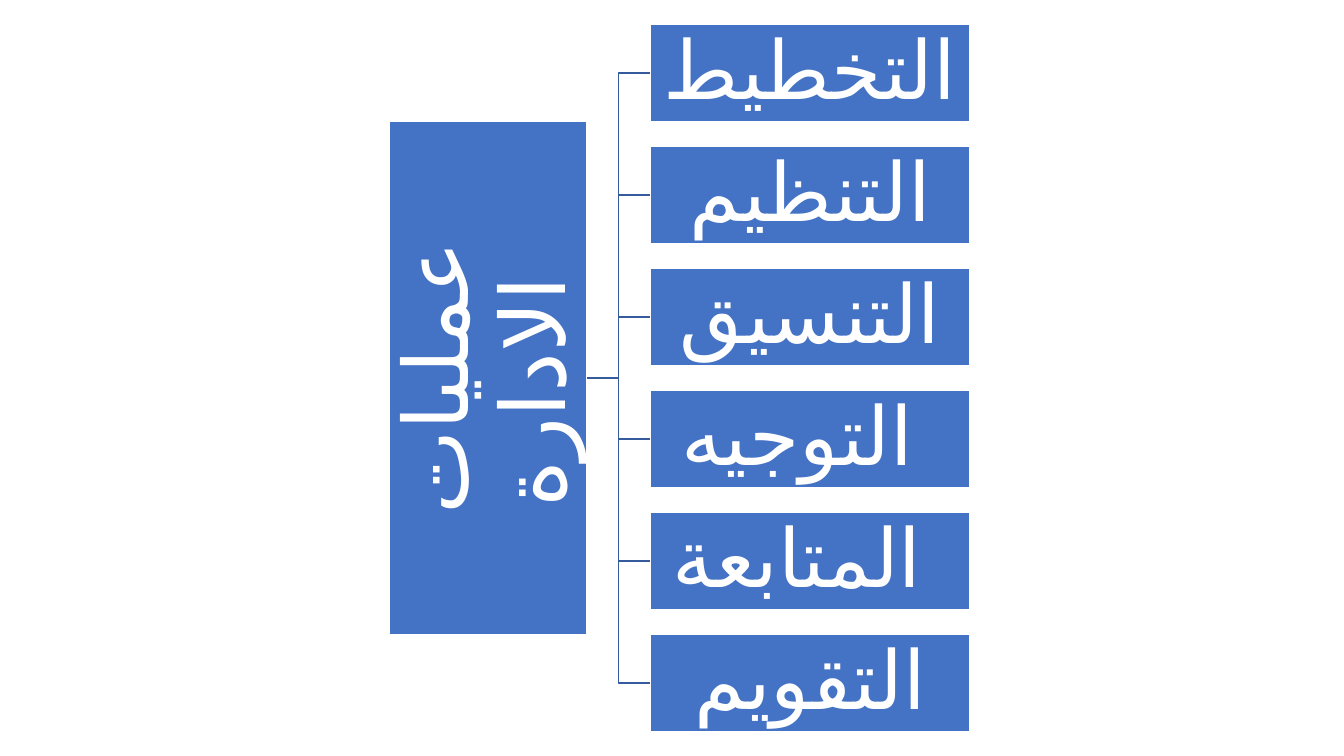
"""Build a slide with a tree of the management processes."""
from lxml import etree
from pptx import Presentation
from pptx.dml.color import RGBColor
from pptx.enum.shapes import MSO_SHAPE
from pptx.enum.text import MSO_ANCHOR, PP_ALIGN
from pptx.oxml.ns import qn
from pptx.util import Inches, Pt

TITLE = "عمليات الادارة "
PROCESSES = ["التخطيط ", "التنظيم", "التنسيق", "التوجيه ", "المتابعة ", "التقويم"]

THEME = {
    "font": "Calibri",
    "arabic_font": "DejaVu Sans",
    "box": RGBColor(0x44, 0x72, 0xC4),
    "branch": RGBColor(0x36, 0x5B, 0x9D),
    "white": RGBColor(0xFF, 0xFF, 0xFF),
    "title_size": Pt(64),
    "process_size": Pt(58),
    "line": Pt(1),
}
FRAME_FORMAT = {
    "word_wrap": True,
    "vertical_anchor": MSO_ANCHOR.MIDDLE,
    **{f"margin_{side}": Inches(0.04) for side in ("left", "top", "right", "bottom")},
}
PARAGRAPH_FORMAT = {"alignment": PP_ALIGN.CENTER, "line_spacing": 0.9}

SLIDE_WIDTH, SLIDE_HEIGHT = 13.33, 7.5
MIDDLE = SLIDE_HEIGHT / 2
TITLE_LENGTH, TITLE_DEPTH, TITLE_RIGHT = 5.09, 1.96, 5.82
PROCESS_LEFT, PROCESS_WIDTH, PROCESS_HEIGHT, PITCH = 6.45, 3.17, 0.97, 1.21


def set_format(target, values):
    for name, value in values.items():
        setattr(target, name, value)


def add_box(slide, text, center, size, font_size, rotation=0):
    (x, y), (width, height) = center, size
    box = slide.shapes.add_shape(
        MSO_SHAPE.RECTANGLE,
        Inches(x - width / 2), Inches(y - height / 2), Inches(width), Inches(height),
    )
    box.rotation = rotation
    box.shadow.inherit = False
    box.fill.solid()
    box.fill.fore_color.rgb = THEME["box"]
    box.line.color.rgb = THEME["white"]
    box.line.width = THEME["line"]
    set_format(box.text_frame, FRAME_FORMAT)
    paragraph = box.text_frame.paragraphs[0]
    set_format(paragraph, PARAGRAPH_FORMAT)
    run = paragraph.add_run()
    run.text = text
    set_format(run.font, {"name": THEME["font"], "size": font_size})
    run.font.color.rgb = THEME["white"]
    complex_font = etree.SubElement(run._r.get_or_add_rPr(), qn("a:cs"))
    complex_font.set("typeface", THEME["arabic_font"])


def add_branch(slide, y):
    bend = (TITLE_RIGHT + PROCESS_LEFT) / 2
    points = [(TITLE_RIGHT, MIDDLE), (bend, MIDDLE), (bend, y), (PROCESS_LEFT, y)]
    start, *corners = [(Inches(across), Inches(down)) for across, down in points]
    builder = slide.shapes.build_freeform(*start)
    builder.add_line_segments(corners, close=False)
    branch = builder.convert_to_shape()
    branch.shadow.inherit = False
    branch.fill.background()
    branch.line.color.rgb = THEME["branch"]
    branch.line.width = THEME["line"]


def main():
    presentation = Presentation()
    presentation.slide_width = Inches(SLIDE_WIDTH)
    presentation.slide_height = Inches(SLIDE_HEIGHT)
    slide = presentation.slides.add_slide(presentation.slide_layouts[6])

    first = MIDDLE - PITCH * (len(PROCESSES) - 1) / 2
    rows = [first + PITCH * index for index in range(len(PROCESSES))]
    for y in rows:
        add_branch(slide, y)
    add_box(slide, TITLE, (TITLE_RIGHT - TITLE_DEPTH / 2, MIDDLE),
            (TITLE_LENGTH, TITLE_DEPTH), THEME["title_size"], rotation=270)
    for process, y in zip(PROCESSES, rows):
        add_box(slide, process, (PROCESS_LEFT + PROCESS_WIDTH / 2, y),
                (PROCESS_WIDTH, PROCESS_HEIGHT), THEME["process_size"])
    presentation.save("out.pptx")


if __name__ == "__main__":
    main()
